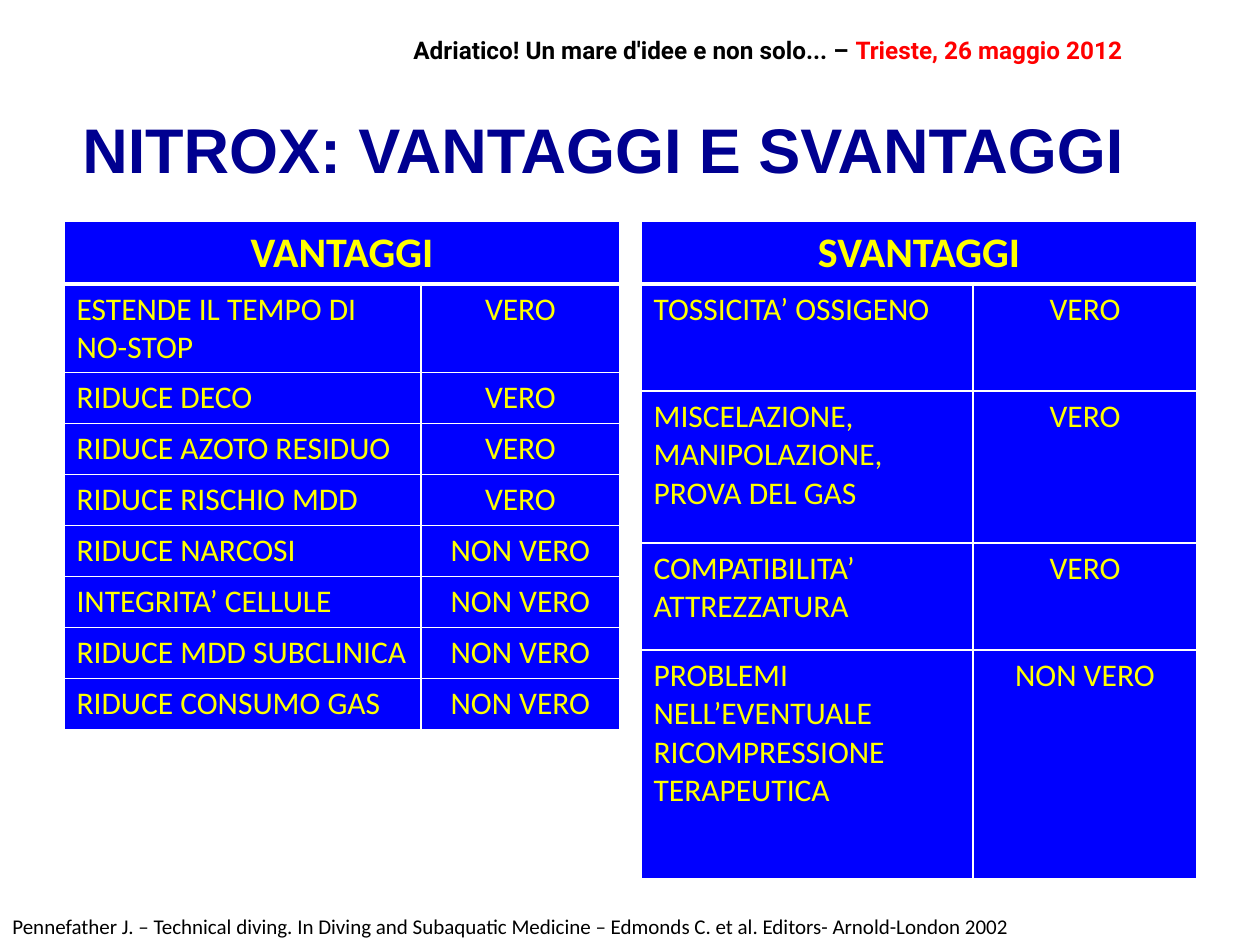
"""Build a slide that lists the pros and cons of nitrox in two tables."""
from dataclasses import dataclass

from lxml.etree import SubElement
from pptx import Presentation
from pptx.dml.color import RGBColor
from pptx.enum.text import MSO_ANCHOR, PP_ALIGN
from pptx.oxml.ns import qn
from pptx.util import Pt

SCALE = 914400 / 126
HUES = {
    "black": "000000",
    "red": "FF0000",
    "navy": "000090",
    "blue": "0000FF",
    "yellow": "FFFF00",
    "white": "FFFFFF",
}


@dataclass(frozen=True)
class Run:
    text: str
    font: str
    size: int
    hue: str
    bold: bool = False
    lift: int = 0


@dataclass(frozen=True)
class Box:
    left: int
    top: int
    width: int
    height: int
    runs: tuple[Run, ...]
    align: PP_ALIGN = PP_ALIGN.LEFT
    anchor: MSO_ANCHOR = MSO_ANCHOR.TOP


@dataclass(frozen=True)
class Grid:
    left: int
    cols: tuple[int, int]
    rows: tuple[int, ...]
    head: str
    items: tuple[tuple[str, str], ...]


TOP = 221
YES, NO = "VERO", "NON VERO"

BOXES = (
    Box(401, 24, 782, 47, (
        Run("Adriatico! Un mare d'idee e non solo... – ", "Roboto", 24, "black", True, 30),
        Run("Trieste, 26 maggio 2012", "Roboto", 24, "red", True, 30),
    )),
    Box(45, 102, 1134, 93, (
        Run("NITROX: VANTAGGI E SVANTAGGI ", "Arial", 36, "navy", True),
    ), PP_ALIGN.CENTER, MSO_ANCHOR.MIDDLE),
    Box(0, 907, 1143, 38, (
        Run("Pennefather J. – Technical diving. In Diving and Subaquatic Medicine – "
            "Edmonds C. et al. Editors- Arnold-London 2002", "Calibri", 12, "black"),
    )),
)

GRIDS = (
    Grid(64, (357, 199), (51,) * 9, "VANTAGGI", (
        ("ESTENDE IL TEMPO DI NO-STOP", YES),
        ("RIDUCE DECO", YES),
        ("RIDUCE AZOTO RESIDUO", YES),
        ("RIDUCE RISCHIO MDD", YES),
        ("RIDUCE NARCOSI", NO),
        ("INTEGRITA’ CELLULE", NO),
        ("RIDUCE MDD SUBCLINICA", NO),
        ("RIDUCE CONSUMO GAS", NO),
    )),
    Grid(641, (332, 224), (62, 107, 152, 107, 229), "SVANTAGGI", (
        ("TOSSICITA’ OSSIGENO", YES),
        ("MISCELAZIONE, MANIPOLAZIONE, PROVA DEL GAS", YES),
        ("COMPATIBILITA’ ATTREZZATURA", YES),
        ("PROBLEMI NELL’EVENTUALE RICOMPRESSIONE TERAPEUTICA", NO),
    )),
)


def px(num: int) -> int:
    """Turn pixels into EMU."""
    return round(num * SCALE)


def color(hue: str) -> RGBColor:
    """Look up a colour by name."""
    return RGBColor.from_string(HUES[hue])


def write(para, runs: tuple[Run, ...], align: PP_ALIGN) -> None:
    """Add the runs to a paragraph."""
    para.alignment = align
    for item in runs:
        run = para.add_run()
        run.text = item.text
        font = run.font
        font.name, font.size, font.bold = item.font, Pt(item.size), item.bold
        font.color.rgb = color(item.hue)
        if item.lift:
            run._r.get_or_add_rPr().set("baseline", str(item.lift * 1000))


def draw_box(slide, box: Box) -> None:
    """Draw one text box."""
    shape = slide.shapes.add_textbox(px(box.left), px(box.top), px(box.width), px(box.height))
    frame = shape.text_frame
    frame.word_wrap = True
    frame.vertical_anchor = box.anchor
    write(frame.paragraphs[0], box.runs, box.align)


def edge(cell, row: int) -> None:
    """Rule a cell in white, heavier below the head row."""
    widths = {"L": 1, "R": 1, "T": 3 if row == 1 else 1, "B": 3 if row == 0 else 1}
    props = cell._tc.get_or_add_tcPr()
    for side, width in widths.items():
        line = SubElement(props, qn(f"a:ln{side}"), w=str(Pt(width)))
        fill = SubElement(line, qn("a:solidFill"))
        SubElement(fill, qn("a:srgbClr"), val=HUES["white"])


def draw_grid(slide, grid: Grid) -> None:
    """Draw one table with a merged head row."""
    table = slide.shapes.add_table(
        len(grid.rows), len(grid.cols), px(grid.left), px(TOP),
        px(sum(grid.cols)), px(sum(grid.rows))).table
    for col, width in zip(table.columns, grid.cols):
        col.width = px(width)
    for row, height in zip(table.rows, grid.rows):
        row.height = px(height)
    table.cell(0, 0).merge(table.cell(0, 1))
    for r, texts in enumerate(((grid.head, ""), *grid.items)):
        for c, text in enumerate(texts):
            cell = table.cell(r, c)
            edge(cell, r)
            cell.fill.solid()
            cell.fill.fore_color.rgb = color("blue")
            if text:
                run = Run(text, "Calibri", 18 if r else 24, "yellow", r == 0)
                align = PP_ALIGN.LEFT if r and c == 0 else PP_ALIGN.CENTER
                write(cell.text_frame.paragraphs[0], (run,), align)


def main() -> None:
    """Build and save the slide."""
    deck = Presentation()
    deck.slide_width, deck.slide_height = px(1260), px(945)
    slide = deck.slides.add_slide(deck.slide_layouts[6])
    for box in BOXES:
        draw_box(slide, box)
    for grid in GRIDS:
        draw_grid(slide, grid)
    deck.save("out.pptx")


if __name__ == "__main__":
    main()
